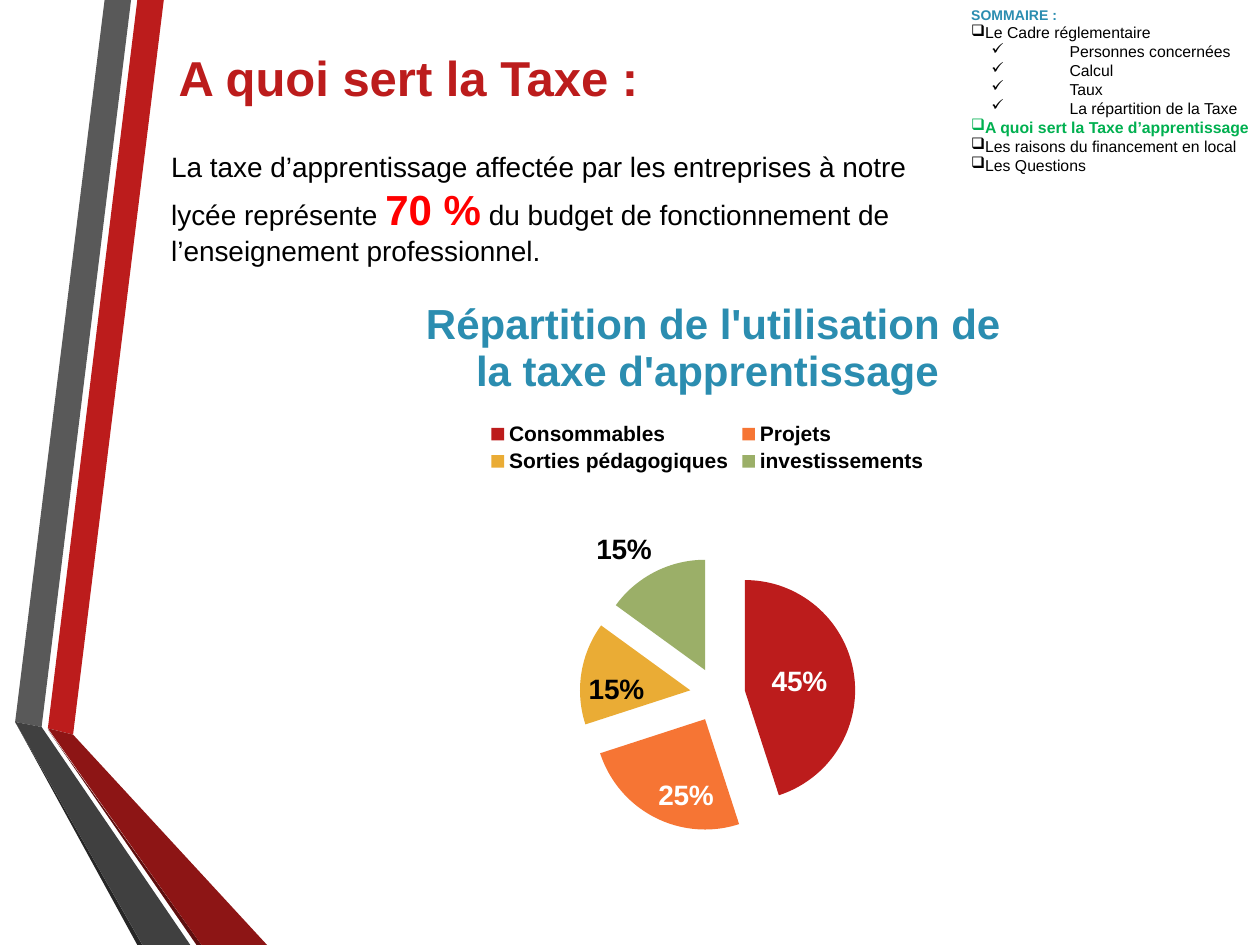
from dataclasses import dataclass

from lxml.etree import SubElement
from pptx import Presentation
from pptx.chart.data import CategoryChartData
from pptx.dml.color import RGBColor
from pptx.enum.chart import XL_CHART_TYPE, XL_LABEL_POSITION, XL_LEGEND_POSITION
from pptx.oxml import parse_xml
from pptx.oxml.ns import nsdecls, qn
from pptx.util import Inches, Pt


@dataclass(frozen=True)
class Theme:
    font: str = "Arial"
    red: str = "BC1C1C"
    dark_red: str = "8D1515"
    deep_red: str = "5E0E0E"
    gray: str = "595959"
    dark_gray: str = "404040"
    deep_gray: str = "262626"
    orange: str = "F67534"
    yellow: str = "EAAC35"
    olive: str = "9BAF68"
    blue: str = "2B8DB0"
    green: str = "00B050"
    bright_red: str = "FF0000"
    black: str = "000000"
    white: str = "FFFFFF"
    title: int = 28
    large: int = 24
    body: int = 16
    legend: int = 12
    menu: int = 9
    menu_title: int = 8


theme = Theme()


def style(font, size, color, bold=False):
    font.name = theme.font
    font.size = Pt(size)
    font.bold = bold
    font.color.rgb = RGBColor.from_string(color)


def add_text_frame(left, top, width, height, wrap=True):
    box = slide.shapes.add_textbox(Inches(left), Inches(top), Inches(width), Inches(height))
    box.text_frame.word_wrap = wrap
    return box.text_frame


presentation = Presentation()
presentation.slide_width = Inches(10)
presentation.slide_height = Inches(7.5)
slide = presentation.slides.add_slide(presentation.slide_layouts[6])

ribbons = [
    (theme.red, [(0.38, 5.78), (0.58, 5.83), (1.3, 0), (1.09, 0)]),
    (theme.gray, [(1.04, 0), (0.83, 0), (0.12, 5.73), (0.33, 5.77)]),
    (theme.deep_gray, [(0.12, 5.73), (1.09, 7.5), (1.13, 7.5)]),
    (theme.deep_red, [(0.38, 5.79), (1.56, 7.5), (1.6, 7.5)]),
    (theme.dark_red, [(0.38, 5.78), (1.6, 7.5), (2.12, 7.5), (0.58, 5.83)]),
    (theme.dark_gray, [(1.51, 7.5), (0.33, 5.77), (0.12, 5.73), (1.13, 7.5)]),
]
for color, points in ribbons:
    corners = [(Inches(x), Inches(y)) for x, y in points]
    builder = slide.shapes.build_freeform(*corners[0])
    builder.add_line_segments(corners[1:], close=True)
    ribbon = builder.convert_to_shape()
    ribbon.shadow.inherit = False
    ribbon.fill.solid()
    ribbon.fill.fore_color.rgb = RGBColor.from_string(color)
    ribbon.line.fill.background()

title_paragraph = add_text_frame(1.32, 0.33, 4, 0.57, wrap=False).paragraphs[0]
title_paragraph.text = "A quoi sert la Taxe :"
style(title_paragraph.font, theme.title, theme.red, bold=True)

categories = [
    ("Consommables", 45, theme.red, theme.white, XL_LABEL_POSITION.CENTER),
    ("Projets", 25, theme.orange, theme.white, XL_LABEL_POSITION.INSIDE_END),
    ("Sorties pédagogiques", 15, theme.yellow, theme.black, XL_LABEL_POSITION.INSIDE_END),
    ("investissements", 15, theme.olive, theme.black, XL_LABEL_POSITION.OUTSIDE_END),
]
chart_data = CategoryChartData()
chart_data.categories = [category[0] for category in categories]
chart_data.add_series("Répartition", [category[1] for category in categories])
chart = slide.shapes.add_chart(
    XL_CHART_TYPE.PIE, Inches(2.52), Inches(2.14), Inches(6.19), Inches(5.01), chart_data
).chart
style(chart.font, theme.legend, theme.black)

chart.has_title = True
chart_title = chart.chart_title.text_frame.paragraphs[0]
chart_title.text = " Répartition de l'utilisation de la taxe d'apprentissage"
style(chart_title.font, theme.large, theme.blue, bold=True)

chart.has_legend = True
chart.legend.position = XL_LEGEND_POSITION.TOP
chart.legend.include_in_layout = False
style(chart.legend.font, theme.legend, theme.black, bold=True)

plot = chart.plots[0]
plot.vary_by_categories = True
series = plot.series[0]
labels = series.data_labels
labels.show_value = False
labels.show_percentage = True
labels.number_format = "0%"
labels.number_format_is_linked = False
style(labels.font, theme.body, theme.black, bold=True)
for index, (name, value, color, label_color, position) in enumerate(categories):
    point = series.points[index]
    point.format.fill.solid()
    point.format.fill.fore_color.rgb = RGBColor.from_string(color)
    style(point.data_label.font, theme.body, label_color, bold=True)
    point.data_label.position = position

for label in chart.element.iter(qn("c:dLbl")):
    label.find(qn("c:showVal")).set("val", "0")
    label.find(qn("c:showPercent")).set("val", "1")

explosion = parse_xml(f'<c:explosion {nsdecls("c")} val="25"/>')
chart.element.find(".//" + qn("c:dPt")).addprevious(explosion)

plot_area = chart.element.find(".//" + qn("c:plotArea"))
for layout in plot_area.findall(qn("c:layout")):
    plot_area.remove(layout)
layout = parse_xml(f'<c:layout {nsdecls("c")}/>')
plot_area.insert(0, layout)
manual_layout = SubElement(layout, qn("c:manualLayout"))
for tag, value in [
    ("layoutTarget", "inner"), ("xMode", "edge"), ("yMode", "edge"),
    ("x", "0.03"), ("y", "0.455"), ("w", "0.966"), ("h", "0.437"),
]:
    SubElement(manual_layout, qn(f"c:{tag}")).set("val", value)

body_paragraph = add_text_frame(1.26, 1.14, 6.35, 1.04).paragraphs[0]
for text, size, color, bold in [
    ("La taxe d’apprentissage affectée par les entreprises à notre lycée représente ",
     theme.body, theme.black, False),
    ("70 %", theme.large, theme.bright_red, True),
    (" du budget de fonctionnement de l’enseignement professionnel.",
     theme.body, theme.black, False),
]:
    run = body_paragraph.add_run()
    run.text = text
    style(run.font, size, color, bold)

menu_frame = add_text_frame(7.61, 0, 2.58, 1.45)
menu_title = menu_frame.paragraphs[0]
menu_title.text = "SOMMAIRE :"
style(menu_title.font, theme.menu_title, theme.blue, bold=True)

margins = {"❑": (0, 0), "✓": (0.78, -0.62)}
for bullet, text in [
    ("❑", "Le Cadre réglementaire"),
    ("✓", "Personnes concernées"),
    ("✓", "Calcul"),
    ("✓", "Taux"),
    ("✓", "La répartition de la Taxe"),
    ("❑", "A quoi sert la Taxe d’apprentissage"),
    ("❑", "Les raisons du financement en local"),
    ("❑", "Les Questions"),
]:
    paragraph = menu_frame.add_paragraph()
    paragraph.text = text
    current = text.startswith("A quoi sert")
    style(paragraph.font, theme.menu, theme.green if current else theme.black, bold=current)
    margin, indent = margins[bullet]
    properties = paragraph.font._element.getparent()
    properties.set("marL", str(Inches(margin)))
    properties.set("indent", str(Inches(indent)))
    bullet_mark = parse_xml(f'<a:buChar {nsdecls("a")} char="{bullet}"/>')
    properties.find(qn("a:defRPr")).addprevious(bullet_mark)

presentation.save("out.pptx")
